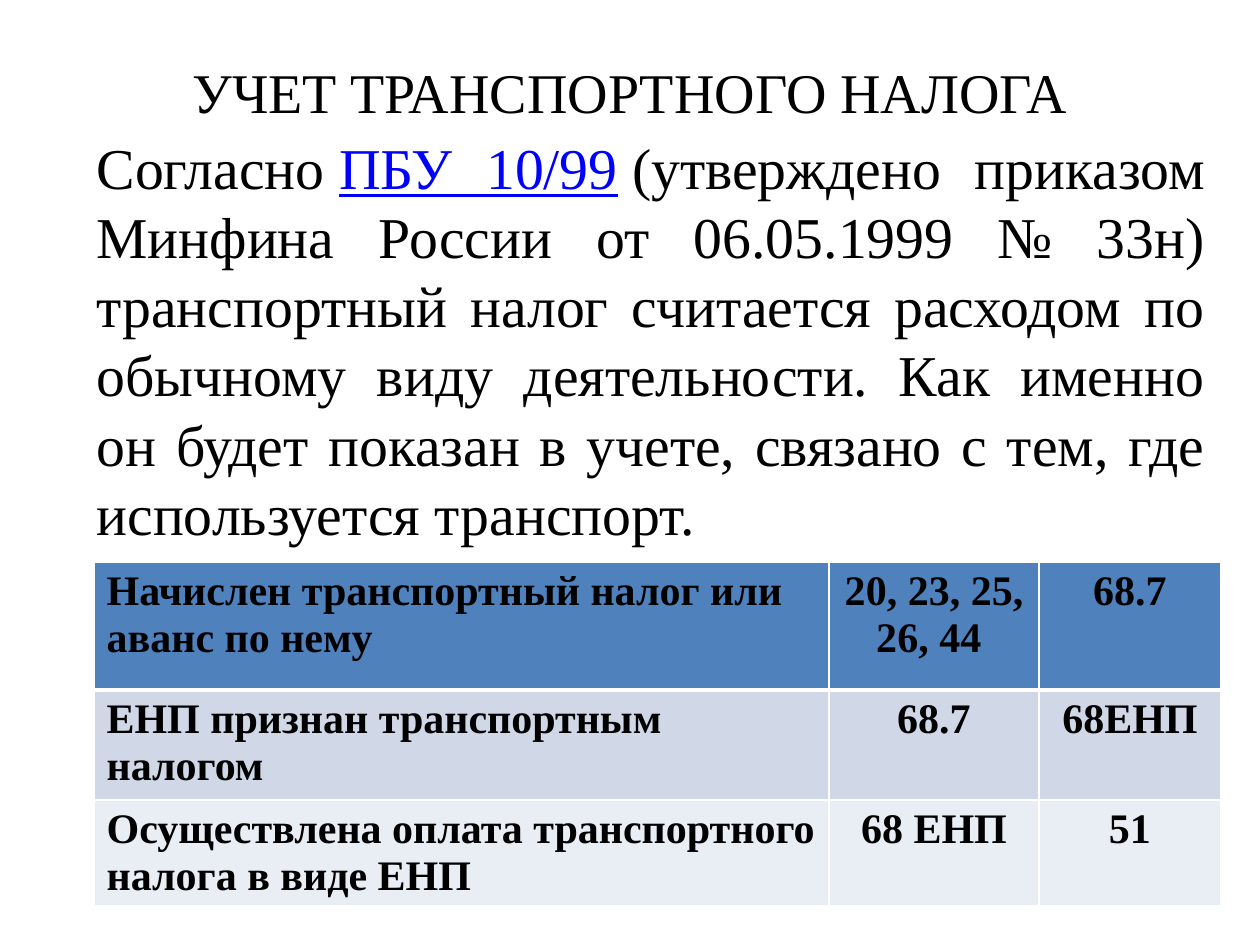
from lxml.etree import SubElement
from pptx import Presentation
from pptx.dml.color import RGBColor
from pptx.enum.text import MSO_ANCHOR, MSO_AUTO_SIZE, PP_ALIGN
from pptx.oxml import parse_xml
from pptx.oxml.ns import nsdecls, qn
from pptx.util import Pt

# Content
TITLE = "УЧЕТ ТРАНСПОРТНОГО НАЛОГА"
BODY = [
    ("Согласно\u00a0", "text", False),
    ("ПБУ 10/99", "link", True),
    ("\u00a0(утверждено приказом Минфина России от 06.05.1999 № 33н) "
     "транспортный налог считается расходом по обычному виду деятельности. "
     "Как именно он будет показан в учете, связано с тем, где используется "
     "транспорт.", "text", False),
]
ENTRIES = [
    ("Начислен транспортный налог или аванс по нему", "20, 23, 25, 26, 44 ", "68.7"),
    ("ЕНП признан транспортным налогом", "68.7", "68ЕНП"),
    ("Осуществлена оплата транспортного налога в виде ЕНП", "68 ЕНП", "51"),
]

# Format and layout, in px
COLORS = {"text": "000000", "link": "0000FF", "border": "FFFFFF"}
ROW_FILLS = ["4F81BD", "D0D8E8", "E9EDF4"]
FONT = "Times New Roman"
TITLE_BOX = (63, 38, 1134, 107)
BODY_BOX = (84, 125, 1134, 735)
TABLE_LEFT, TABLE_TOP = 94, 562
COLUMN_WIDTHS = [735, 210, 182]
ROW_HEIGHTS = [128, 110, 105]


def px(length):
    return round(length * 914400 / 126)


def place(shape, box):
    for name, length in zip(("left", "top", "width", "height"), box):
        setattr(shape, name, px(length))


def add_span(para, text, size, color="text", **extra):
    span = para.add_run()
    span.text = text
    for name, value in {"name": FONT, "size": Pt(size), **extra}.items():
        setattr(span.font, name, value)
    span.font.color.rgb = RGBColor.from_string(COLORS[color])


def set_borders(cell, widths):
    properties = cell._tc.get_or_add_tcPr()
    for index, (side, width) in enumerate(zip("LRTB", widths)):
        properties.insert(index, parse_xml(
            f'<a:ln{side} {nsdecls("a")} w="{Pt(width)}"><a:solidFill>'
            f'<a:srgbClr val="{COLORS["border"]}"/></a:solidFill></a:ln{side}>'))


deck = Presentation()
deck.slide_width, deck.slide_height = px(1260), px(945)
page = deck.slides.add_slide(deck.slide_layouts[1])

# Title
title = page.shapes.title
place(title, TITLE_BOX)
title.text_frame.vertical_anchor = MSO_ANCHOR.MIDDLE
para = title.text_frame.paragraphs[0]
para.alignment = PP_ALIGN.CENTER
add_span(para, TITLE, 32)

# Body paragraph without a bullet
body = page.placeholders[1]
place(body, BODY_BOX)
body.text_frame.auto_size = MSO_AUTO_SIZE.NONE
para = body.text_frame.paragraphs[0]
for name, value in {"alignment": PP_ALIGN.JUSTIFY, "line_spacing": 1.0,
                    "space_before": Pt(0)}.items():
    setattr(para, name, value)
paragraph_properties = para._p.get_or_add_pPr()
for name in ("marL", "indent"):
    paragraph_properties.set(name, "0")
SubElement(paragraph_properties, qn("a:buNone"))
for text, color, underline in BODY:
    add_span(para, text, 33, color, underline=underline)

# Table of entries
table = page.shapes.add_table(
    len(ENTRIES), len(COLUMN_WIDTHS), px(TABLE_LEFT), px(TABLE_TOP),
    px(sum(COLUMN_WIDTHS)), px(sum(ROW_HEIGHTS))).table
for column, width in zip(table.columns, COLUMN_WIDTHS):
    column.width = px(width)
for row, height in zip(table.rows, ROW_HEIGHTS):
    row.height = px(height)
for row_index, (entry, fill) in enumerate(zip(ENTRIES, ROW_FILLS)):
    for column_index, text in enumerate(entry):
        cell = table.cell(row_index, column_index)
        cell.fill.solid()
        cell.fill.fore_color.rgb = RGBColor.from_string(fill)
        set_borders(cell, (1, 1, 3 if row_index == 1 else 1, 3 if row_index == 0 else 1))
        para = cell.text_frame.paragraphs[0]
        para.alignment = PP_ALIGN.CENTER if column_index else PP_ALIGN.LEFT
        add_span(para, text, 24, bold=True)

deck.save("out.pptx")
